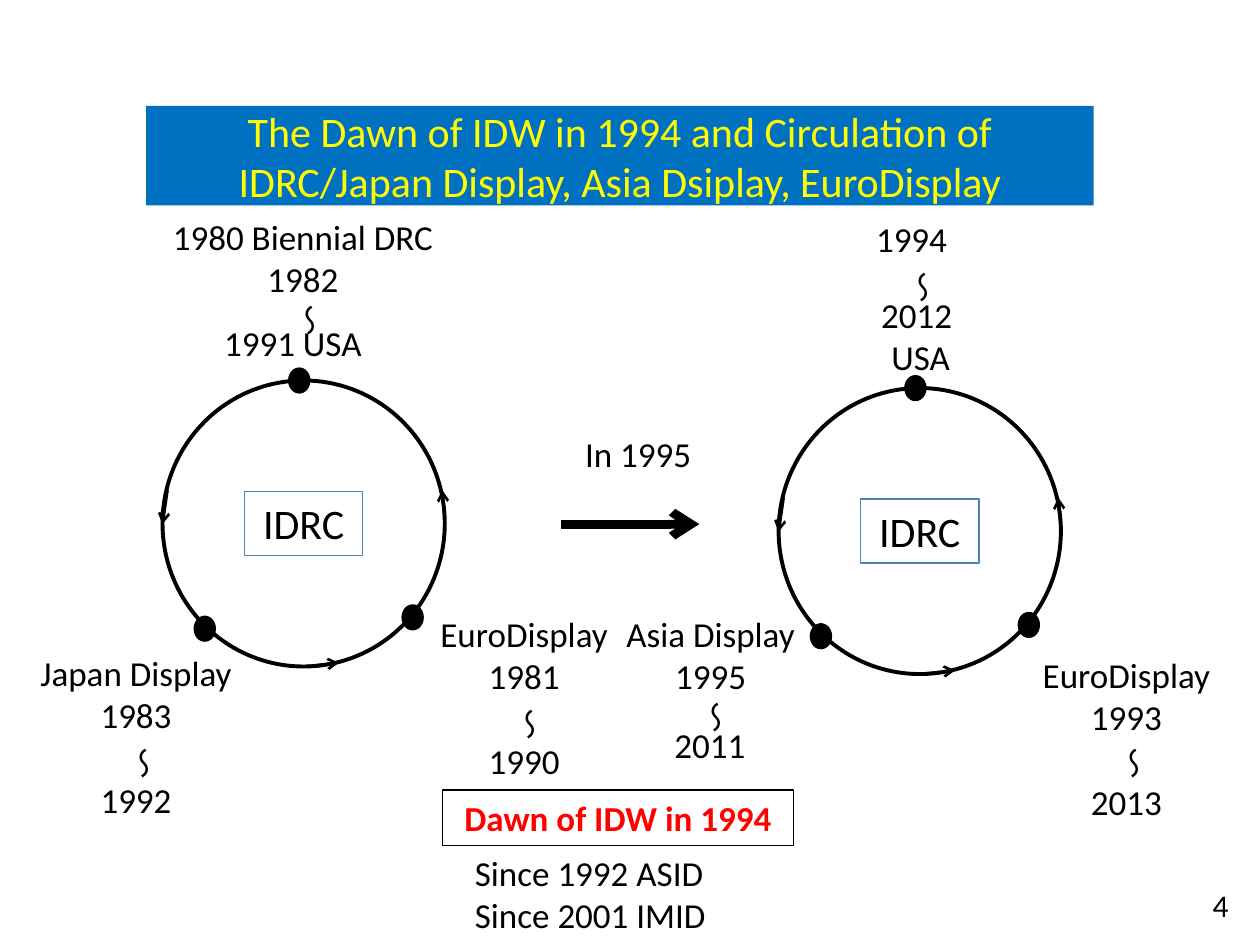
from dataclasses import dataclass

from lxml import etree
from pptx import Presentation, util as u
from pptx.dml.color import RGBColor
from pptx.enum import shapes, text
from pptx.oxml import ns


@dataclass(frozen=True)
class Theme:
    font: str = "Calibri"
    black: str = "000000"
    banner: str = "0070C0"
    banner_text: str = "FFFF00"
    frame: str = "4F81BD"
    accent: str = "FF0000"
    heading: int = 24
    body: int = 20
    small: int = 18
    line_height: float = 1.22


class Board:
    COLUMNS, ROWS = 100, 75
    CENTER, LEFT, RIGHT = text.PP_ALIGN.CENTER, text.PP_ALIGN.LEFT, text.PP_ALIGN.RIGHT

    def __init__(self, deck, theme):
        self.theme = theme
        self.column = deck.slide_width / self.COLUMNS
        self.row = deck.slide_height / self.ROWS
        self.slide = deck.slides.add_slide(deck.slide_layouts[6])

    def place(self, *lengths):
        steps = (self.column, self.row) * 2
        return [u.Emu(round(n * step)) for n, step in zip(lengths, steps)]

    def fill_text(self, frame, lines, size=None, color=None, align=CENTER, bold=False,
                  gap_before_last=0, middle=False):
        size = size or self.theme.body
        frame.word_wrap = True
        frame.vertical_anchor = text.MSO_ANCHOR.MIDDLE if middle else text.MSO_ANCHOR.TOP
        for index, line in enumerate(lines):
            paragraph = frame.paragraphs[0] if index == 0 else frame.add_paragraph()
            paragraph.alignment = align
            if gap_before_last and index == len(lines) - 1:
                paragraph.space_before = u.Pt(gap_before_last * size * self.theme.line_height)
            run = paragraph.add_run()
            run.text = line
            run.font.name = self.theme.font
            run.font.size = u.Pt(size)
            run.font.bold = bold
            run.font.color.rgb = RGBColor.from_string(color or self.theme.black)

    def label(self, at, *lines, **style):
        self.fill_text(self.slide.shapes.add_textbox(*self.place(*at)).text_frame, lines, **style)

    def shape(self, kind, at, fill=None, line=None, weight=0.75):
        item = self.slide.shapes.add_shape(kind, *self.place(*at))
        item.shadow.inherit = False
        if fill:
            item.fill.solid()
            item.fill.fore_color.rgb = RGBColor.from_string(fill)
        else:
            item.fill.background()
        if line:
            item.line.color.rgb = RGBColor.from_string(line)
            item.line.width = u.Pt(weight)
        else:
            item.line.fill.background()
        return item

    def box(self, at, caption, fill=None, line=None, **style):
        panel = self.shape(shapes.MSO_SHAPE.RECTANGLE, at, fill, line)
        self.fill_text(panel.text_frame, [caption], **style)

    def arrow(self, start, end, weight=1.5):
        arrow = self.slide.shapes.add_connector(
            shapes.MSO_CONNECTOR.STRAIGHT, *self.place(*start, *end))
        arrow.line.color.rgb = RGBColor.from_string(self.theme.black)
        arrow.line.width = u.Pt(weight)
        properties = arrow._element.spPr
        outline = properties.find(ns.qn("a:ln"))
        etree.SubElement(outline, ns.qn("a:tailEnd"), type="arrow")
        etree.SubElement(properties, ns.qn("a:effectLst"))

    def until(self, left, top):
        mark = self.slide.shapes.add_textbox(*self.place(left, top, 5.05, 4.5))
        self.fill_text(mark.text_frame, ["～"], size=self.theme.small, align=self.LEFT)
        mark.text_frame._txBody.bodyPr.set("vert", "eaVert")

    def cycle(self, left, top):
        black = self.theme.black
        oval = shapes.MSO_SHAPE.OVAL
        self.shape(oval, (left, top, 22.4, 22.7), line=black, weight=2.25)
        for x, y in ((2.6, 18.8), (10.1, -0.9), (19.1, 17.9)):
            self.shape(oval, (left + x, top + y, 1.5, 1.8), black, black, 2)
        for x1, y1, x2, y2 in ((11.2, 22.7, 14, 22.4), (22.4, 11.4, 22.2, 8.7),
                               (0.4, 8.7, 0, 11.4)):
            self.arrow((left + x1, top + y1), (left + x2, top + y2))
        self.box((left + 6.5, top + 8.8, 9.4, 5.1), "IDRC", line=self.theme.frame,
                 size=self.theme.heading)

    def region(self, left, top, name, first, last):
        self.label((left, top, 17.2, 14.5), name, first, last, gap_before_last=1)


def main():
    deck = Presentation()
    deck.slide_width, deck.slide_height = u.Inches(10), u.Inches(7.5)
    theme = Theme()
    board = Board(deck, theme)

    board.box((11.6, 8.4, 75.2, 7.9),
              "The Dawn of IDW in 1994 and Circulation of "
              "IDRC/Japan Display, Asia Dsiplay, EuroDisplay",
              fill=theme.banner, size=theme.heading, color=theme.banner_text, middle=True)

    for ring in ((12.9, 30.2), (61.8, 30.8)):
        board.cycle(*ring)

    board.label((9.1, 16.6, 29.9, 7.7), "1980 Biennial DRC", "1982")
    board.label((14.5, 25, 17.5, 4.4), "1991 USA")
    board.label((63.6, 16.8, 17.5, 4.4), "1994")
    board.label((64, 22.8, 17.5, 7.7), "2012", " USA")

    for region in ((2.2, 51.2, "Japan Display", "1983", "1992"),
                   (33, 48.1, "EuroDisplay", "1981", "1990"),
                   (80.8, 51.4, "EuroDisplay", "1993", "2013")):
        board.region(*region)
    board.label((46.9, 48.1, 19, 7.7), "Asia Display 1995")
    board.label((47.6, 56.9, 17.5, 4.4), "2011")

    for mark in ((21.5, 23.2), (70.1, 20.6), (8.3, 58.4), (38.9, 55.3),
                 (53.7, 54.7), (86.9, 58.4)):
        board.until(*mark)

    board.label((41.9, 33.8, 17.5, 4.4), "In 1995")
    board.arrow((44.5, 41.6), (55.5, 41.6), weight=5)

    board.box((35.1, 62.7, 27.9, 4.4), "Dawn of IDW in 1994", line=theme.black,
              color=theme.accent, bold=True)
    board.label((36.7, 67.1, 27.9, 7.7), "Since 1992 ASID", "Since 2001 IMID",
                align=board.LEFT)
    board.label((75.2, 69.8, 23.3, 4), "4", size=theme.small, align=board.RIGHT, middle=True)

    deck.save("out.pptx")


if __name__ == "__main__":
    main()
